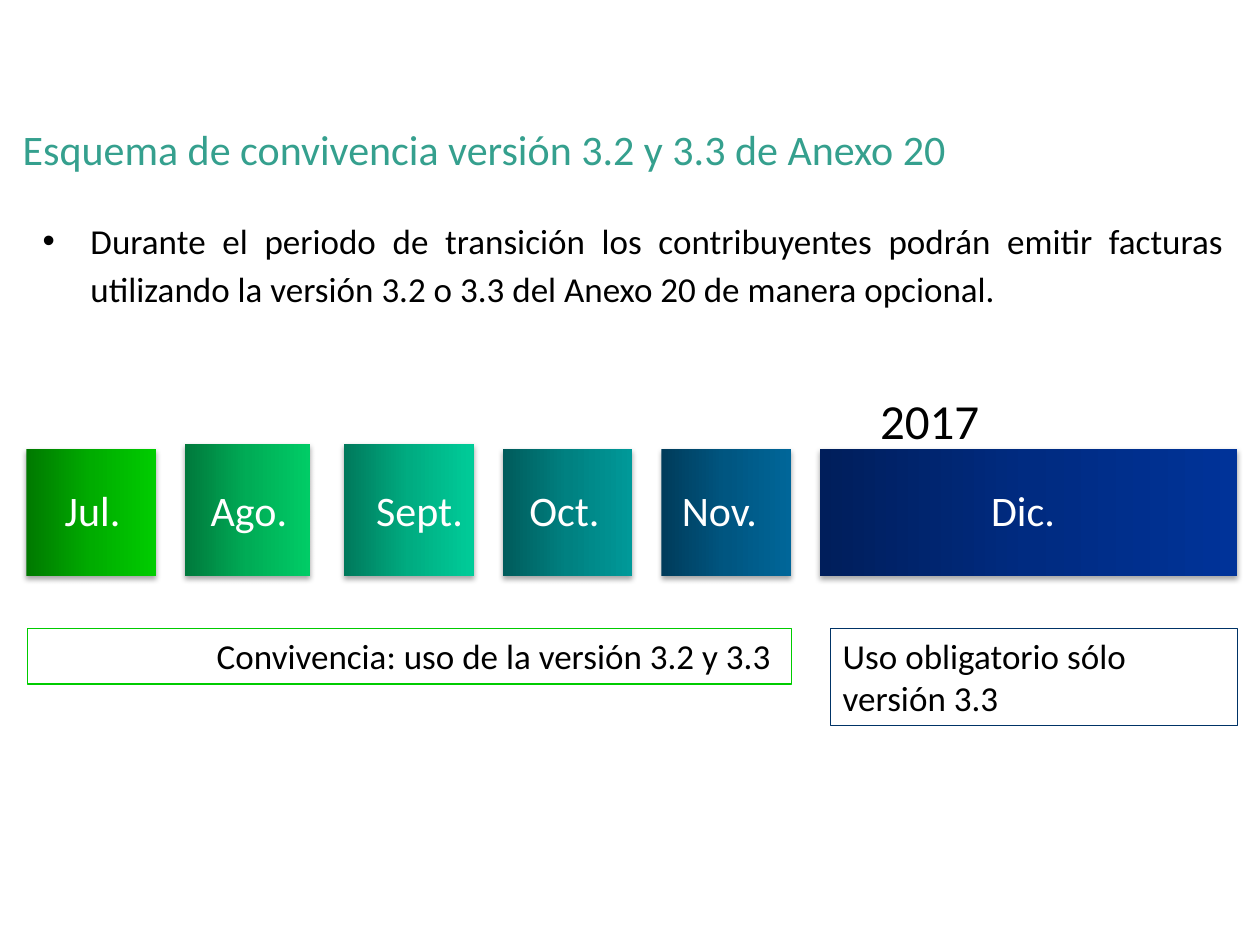
from lxml.etree import SubElement as Sub
from pptx import Presentation
from pptx.dml.color import RGBColor as Rgb
from pptx.enum.shapes import MSO_SHAPE as Kind
from pptx.enum.text import MSO_ANCHOR as Anchor, PP_ALIGN as Align
from pptx.oxml.ns import qn
from pptx.util import Inches, Pt

FONT = "Calibri"
INK = {"title": "35A08E", "text": "000000", "label": "FFFFFF",
       "both": "00CC00", "only": "003366"}

# Timeline grid: equal columns, the last one wider
LEFT, STEP, BASE = 0.21, 1.26, 4.57
# Month, box width and height, label left and width, gradient colours
MONTHS = [
    ("Jul.", 1.03, 1.01, 0.22, 1.03, ("007900", "00AC00", "00CC00")),
    ("Ago.", 0.99, 1.05, 1.42, 1.11, ("00793C", "00AC56", "00CC66")),
    ("Sept.", 1.03, 1.05, 2.75, 1.16, ("00795B", "00AC81", "00CC99")),
    ("Oct.", 1.03, 1.01, 3.95, 1.06, ("005B5B", "008181", "009999")),
    ("Nov.", 1.03, 1.01, 5.18, 1.06, ("003C5B", "005681", "006699")),
    ("Dic.", 3.31, 1.01, 7.59, 1.06, ("001E5B", "002B81", "003399")),
]


def place(shape, left, top, width, height):
    shape.left, shape.top = Inches(left), Inches(top)
    shape.width, shape.height = Inches(width), Inches(height)


def write(shape, text, size, ink, align=Align.LEFT):
    frame = shape.text_frame
    frame.word_wrap = True
    frame.vertical_anchor = Anchor.TOP
    frame.text = text
    para = frame.paragraphs[0]
    para.alignment = align
    font = para.runs[0].font
    font.name, font.size = FONT, Pt(size)
    font.color.rgb = Rgb.from_string(INK[ink])
    return para


def add_text(slide, area, text, size, ink, align=Align.LEFT):
    box = slide.shapes.add_textbox(*map(Inches, area))
    return write(box, text, size, ink, align)


def add_frame(slide, area, text, ink, align):
    box = slide.shapes.add_shape(Kind.RECTANGLE, *map(Inches, area))
    box.shadow.inherit = False
    box.fill.background()
    box.line.color.rgb = Rgb.from_string(INK[ink])
    box.line.width = Pt(0.75)
    write(box, text, 20, "text", align)


def add_block(slide, area, tones):
    box = slide.shapes.add_shape(Kind.RECTANGLE, *map(Inches, area))
    box.line.fill.background()
    # Three-stop gradient from left to right
    box.fill.gradient()
    box.fill.gradient_angle = 0
    props = box._element.spPr
    stops = props.find(qn("a:gradFill")).find(qn("a:gsLst"))
    for stop in list(stops):
        stops.remove(stop)
    for pos, tone in zip((0, 50000, 100000), tones):
        stop = Sub(stops, qn("a:gs"), pos=str(pos))
        Sub(stop, qn("a:srgbClr"), val=tone)
    # Soft shadow straight below
    box.shadow.inherit = False
    shade = Sub(props.find(qn("a:effectLst")), qn("a:outerShdw"),
                blurRad=str(Pt(3.1)), dist=str(Pt(1.8)),
                dir="5400000", rotWithShape="0")
    tint = Sub(shade, qn("a:srgbClr"), val="000000")
    Sub(tint, qn("a:alpha"), val="35000")


def add_bullet(slide, area, text):
    para = add_text(slide, area, text, 20, "text", Align.JUSTIFY)
    para.line_spacing, para.space_after = 1.15, Pt(10)
    props = para._p.get_or_add_pPr()
    props.set("marL", str(Inches(0.38)))
    props.set("indent", str(Inches(-0.38)))
    Sub(props, qn("a:buFont"), typeface="Arial")
    Sub(props, qn("a:buChar"), char="•")


def main():
    deck = Presentation()
    deck.slide_width, deck.slide_height = Inches(10), Inches(7.5)
    slide = deck.slides.add_slide(deck.slide_layouts[5])

    # Title and introduction
    title = slide.shapes.title
    place(title, 0.08, 0.93, 7.79, 0.5)
    write(title, "Esquema de convivencia versión 3.2 y 3.3 de Anexo 20",
          24, "title")
    add_bullet(slide, (0.24, 1.64, 9.57, 0.88),
               "Durante el periodo de transición los contribuyentes podrán "
               "emitir facturas utilizando la versión 3.2 o 3.3 del Anexo 20 "
               "de manera opcional.")

    # Timeline
    add_text(slide, (3.07, 3.05, 4.8, 0.57), "2017", 28, "text", Align.RIGHT)
    for col, (month, wide, high, left, span, tones) in enumerate(MONTHS):
        add_block(slide, (LEFT + col * STEP, BASE - high, wide, high), tones)
        add_text(slide, (left, 3.8, span, 0.5), month, 24, "label",
                 Align.CENTER)

    # Rules for each period
    add_frame(slide, (0.22, 4.99, 6.06, 0.44),
              "Convivencia: uso de la versión 3.2 y 3.3 ", "both", Align.RIGHT)
    add_frame(slide, (6.59, 4.99, 3.23, 0.77),
              "Uso obligatorio sólo versión 3.3", "only", Align.LEFT)

    deck.save("out.pptx")


if __name__ == "__main__":
    main()
